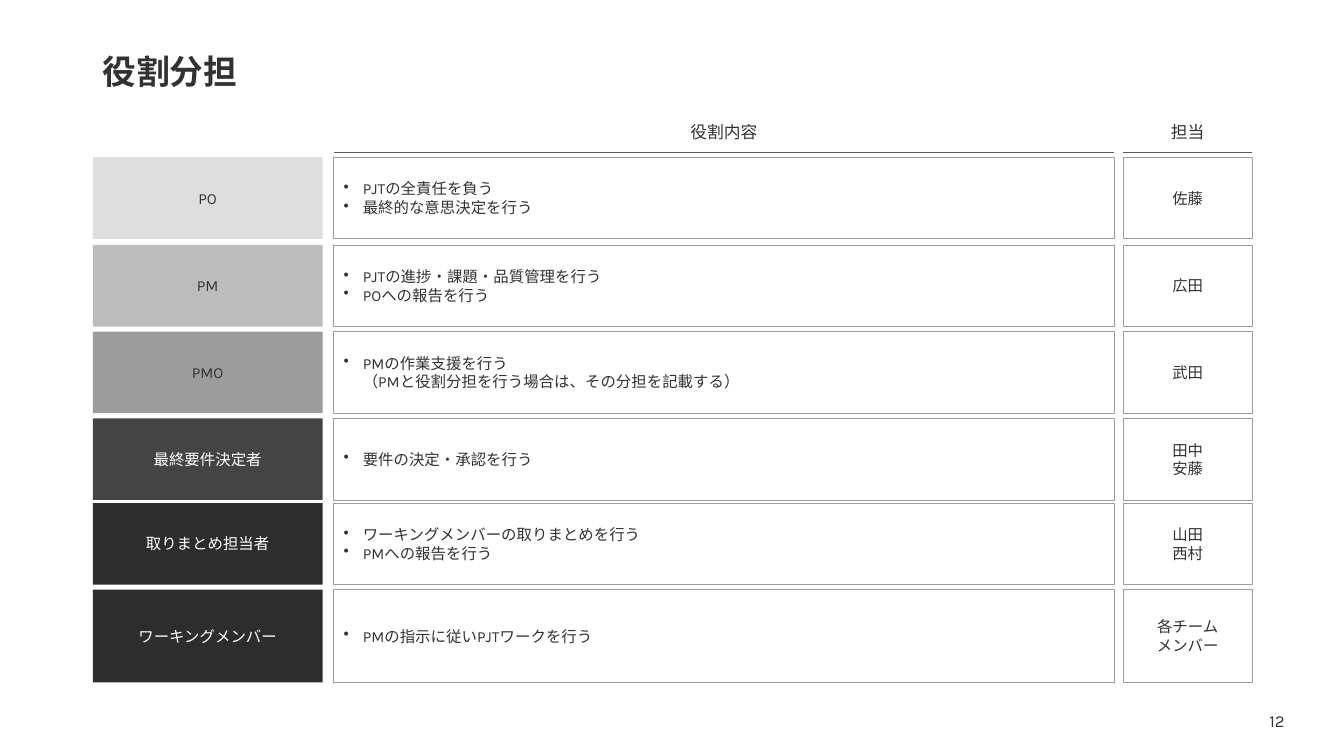
from lxml import etree
from pptx import Presentation
from pptx.dml.color import RGBColor
from pptx.enum.shapes import MSO_CONNECTOR as Connector, MSO_SHAPE as Shape
from pptx.enum.text import MSO_ANCHOR as Anchor, PP_ALIGN as Align
from pptx.oxml.ns import qn
from pptx.util import Pt

EMU_PER_PX = 9144  # 100 px to the inch


def px(length):
    return length * EMU_PER_PX


def color(hex_string):
    return RGBColor.from_string(hex_string)


class RoleSlide:
    font_name = "Karla"
    text_color = "323232"
    border_color = "9C9C9C"
    rule_color = "5A5A5A"
    bullet_indent = 19

    def __init__(self, presentation):
        self.slide = presentation.slides.add_slide(presentation.slide_layouts[6])

    def set_text(self, shape, lines, size, hex_color=None, align=Align.CENTER,
                 bold=False, bulleted=False, line_spacing=None):
        frame = shape.text_frame
        frame.word_wrap = True
        frame.vertical_anchor = Anchor.MIDDLE
        for index, line in enumerate(lines):
            paragraph = frame.add_paragraph() if index else frame.paragraphs[0]
            paragraph.text = line
            paragraph.alignment = align
            if line_spacing:
                paragraph.line_spacing = line_spacing
            if bulleted:
                self.add_bullet(paragraph)
            font = paragraph.font
            font.name, font.size, font.bold = self.font_name, Pt(size), bold
            font.color.rgb = color(hex_color or self.text_color)
            # Japanese characters take the East Asian typeface
            etree.SubElement(font._element, qn("a:ea"), typeface=self.font_name)

    def add_bullet(self, paragraph):
        properties = paragraph._p.get_or_add_pPr()
        properties.set("marL", str(px(self.bullet_indent)))
        properties.set("indent", str(-px(self.bullet_indent)))
        etree.SubElement(properties, qn("a:buChar"), char="•")

    def label(self, left, top, width, height, text, size, **style):
        box = self.slide.shapes.add_textbox(px(left), px(top), px(width), px(height))
        self.set_text(box, [text], size, **style)

    def cell(self, left, top, width, height, lines, fill=None, **style):
        """Draw a filled cell, or an outlined one when no fill is given."""
        shape = self.slide.shapes.add_shape(
            Shape.RECTANGLE, px(left), px(top), px(width), px(height))
        shape.shadow.inherit = False
        if fill:
            shape.fill.solid()
            shape.fill.fore_color.rgb = color(fill)
            shape.line.fill.background()
        else:
            shape.fill.background()
            shape.line.color.rgb = color(self.border_color)
            shape.line.width = Pt(0.5)
        self.set_text(shape, lines, 11, **style)

    def rule(self, left, top, width):
        line = self.slide.shapes.add_connector(
            Connector.STRAIGHT, px(left), px(top), px(left + width), px(top))
        line.line.color.rgb = color(self.rule_color)
        line.line.width = Pt(0.5)
        etree.SubElement(line._element.spPr, qn("a:effectLst"))

    def column_header(self, left, width, text):
        self.label(left, 116, width, 30, text, 12)
        self.rule(left, 151, width)


ROLE_COLUMN = (92, 228)
DUTY_COLUMN = (331, 774)
PERSON_COLUMN = (1114, 128)

# top, height, fill, role colour, role, duties, people
ROWS = [
    (156, 81, "DEDEDE", "323232", "PO",
     ["PJTの全責任を負う", "最終的な意思決定を行う"], ["佐藤"]),
    (243, 81, "BDBDBD", "323232", "PM",
     ["PJTの進捗・課題・品質管理を行う", "POへの報告を行う"], ["広田"]),
    (329, 81, "9C9C9C", "323232", "PMO",
     ["PMの作業支援を行う\n（PMと役割分担を行う場合は、その分担を記載する）"], ["武田"]),
    (415, 81, "444444", "FFFFFF", "最終要件決定者",
     ["要件の決定・承認を行う"], ["田中", "安藤"]),
    (499, 81, "2D2D2D", "FFFFFF", "取りまとめ担当者",
     ["ワーキングメンバーの取りまとめを行う", "PMへの報告を行う"], ["山田", "西村"]),
    (585, 92, "2D2D2D", "FFFFFF", "ワーキングメンバー",
     ["PMの指示に従いPJTワークを行う"], ["各チーム", "メンバー"]),
]


def main():
    presentation = Presentation()
    presentation.slide_width, presentation.slide_height = px(1333), px(750)
    slide = RoleSlide(presentation)
    slide.label(92, 40, 1150, 67, "役割分担", 24, align=Align.LEFT,
                bold=True, line_spacing=0.9)
    slide.column_header(*DUTY_COLUMN, "役割内容")
    slide.column_header(*PERSON_COLUMN, "担当")
    for top, height, fill, role_color, role, duties, people in ROWS:
        for (left, width), lines, style in (
            (ROLE_COLUMN, [role], {"fill": fill, "hex_color": role_color}),
            (DUTY_COLUMN, duties, {"align": Align.LEFT, "bulleted": True}),
            (PERSON_COLUMN, people, {}),
        ):
            slide.cell(left, top, width, height, lines, **style)
    slide.label(1242, 695, 49, 40, "12", 12)
    presentation.save("out.pptx")


if __name__ == "__main__":
    main()
